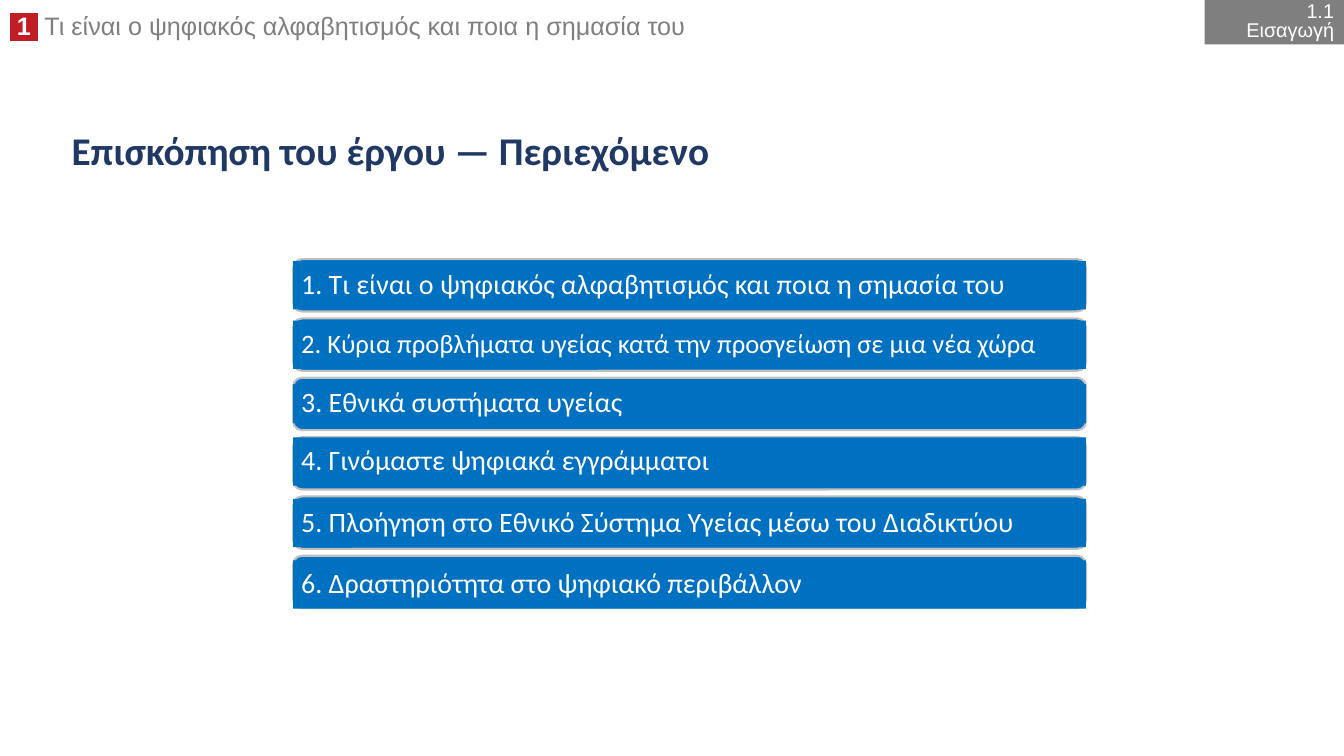
from lxml.etree import SubElement
from pptx import Presentation
from pptx.dml.color import RGBColor
from pptx.enum.shapes import MSO_SHAPE
from pptx.enum.text import MSO_ANCHOR, PP_ALIGN
from pptx.oxml.ns import qn
from pptx.util import Cm, Pt

WHITE = RGBColor(0xFF, 0xFF, 0xFF)
GREY = RGBColor(0x7F, 0x7F, 0x7F)
SILVER = RGBColor(0xBF, 0xBF, 0xBF)
NAVY = RGBColor(0x20, 0x38, 0x64)
BLUE = RGBColor(0x00, 0x70, 0xC0)
RED = RGBColor(0xC0, 0x1E, 0x24)

TITLE = "Επισκόπηση του έργου — Περιεχόμενο"
MODULE_NUMBER = " 1 "
MODULE_NAME = " Τι είναι ο ψηφιακός αλφαβητισμός και ποια η σημασία του"
SECTION = "1.1 Εισαγωγή"

# text, font size, label top, label height
TOPICS = [
    ("1. Τι είναι ο ψηφιακός αλφαβητισμός και ποια η σημασία του", 20, 6.58, 1.22),
    ("2. Κύρια προβλήματα υγείας κατά την προσγείωση σε μια νέα χώρα", 19, 8.08, 1.22),
    ("3. Εθνικά συστήματα υγείας", 20, 9.68, 0.99),
    ("4. Γινόμαστε ψηφιακά εγγράμματοι", 20, 11.02, 1.22),
    ("5. Πλοήγηση στο Εθνικό Σύστημα Υγείας μέσω του Διαδικτύου", 20, 12.57, 1.22),
    ("6. Δραστηριότητα στο ψηφιακό περιβάλλον", 20, 14.12, 1.22),
]
BAR_LEFT, BAR_TOP, BAR_PITCH = 7.39, 6.53, 1.495
BAR_WIDTH, BAR_HEIGHT = 19.98, 1.32


def add_run(p, text, size, font, color, bold=False):
    r = p.add_run()
    r.text = text
    r.font.size = Pt(size)
    r.font.name = font
    r.font.bold = bold
    r.font.color.rgb = color
    return r


def highlight(r, color):
    rPr = r.font._element
    mark = SubElement(rPr, qn("a:highlight"))
    SubElement(mark, qn("a:srgbClr")).set("val", str(color))
    rPr.find(qn("a:solidFill")).addnext(mark)


def add_box(slide, kind, left, top, width, height, fill):
    sp = slide.shapes.add_shape(kind, Cm(left), Cm(top), Cm(width), Cm(height))
    sp.shadow.inherit = False
    sp.fill.solid()
    sp.fill.fore_color.rgb = fill
    sp.line.fill.background()
    return sp


def format_text(sp, spacing, align=PP_ALIGN.LEFT, inset=None):
    tf = sp.text_frame
    tf.word_wrap = True
    tf.vertical_anchor = MSO_ANCHOR.MIDDLE
    if inset is not None:
        tf.margin_left = tf.margin_right = Cm(inset)
        tf.margin_top = tf.margin_bottom = Cm(inset)
    p = tf.paragraphs[0]
    p.alignment = align
    p.line_spacing = spacing
    return p


def main():
    prs = Presentation()
    prs.slide_width, prs.slide_height = Cm(33.87), Cm(19.05)
    slide = prs.slides.add_slide(prs.slide_layouts[5])

    title = slide.shapes.title
    title.left, title.top = Cm(1.55), Cm(3)
    title.width, title.height = Cm(30.73), Cm(1.68)
    add_run(format_text(title, 0.9), TITLE, 28, "Calibri", NAVY, True)

    header = slide.shapes.add_textbox(Cm(0), Cm(0.28), Cm(24.18), Cm(0.86))
    p = format_text(header, 0.8)
    header.text_frame.vertical_anchor = MSO_ANCHOR.TOP
    highlight(add_run(p, MODULE_NUMBER, 18, "Arial", WHITE, True), RED)
    add_run(p, MODULE_NAME, 18, "Arial", GREY)

    tab = add_box(slide, MSO_SHAPE.RECTANGLE, 30.36, 0, 3.51, 1.12, GREY)
    add_run(format_text(tab, 0.8, PP_ALIGN.RIGHT), SECTION, 14.2, "Arial", WHITE)

    for i, (text, size, top, height) in enumerate(TOPICS):
        bar = add_box(slide, MSO_SHAPE.ROUNDED_RECTANGLE, BAR_LEFT,
                      BAR_TOP + i * BAR_PITCH, BAR_WIDTH, BAR_HEIGHT, BLUE)
        bar.line.color.rgb = SILVER
        bar.line.width = Pt(1.5)
        label = add_box(slide, MSO_SHAPE.RECTANGLE, BAR_LEFT, top,
                        BAR_WIDTH, height, BLUE)
        add_run(format_text(label, 0.9, inset=0.2), text, size, "Calibri", WHITE)

    prs.save("out.pptx")


if __name__ == "__main__":
    main()
